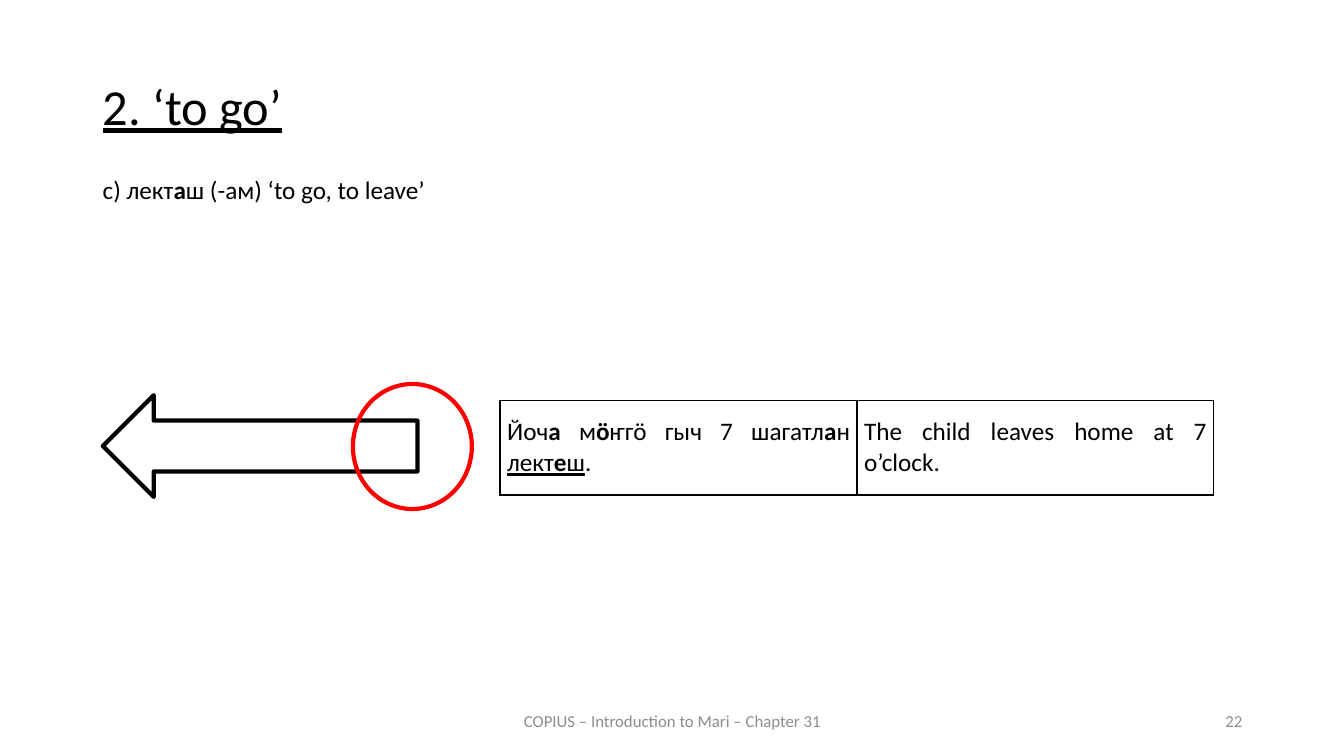
from dataclasses import dataclass

from lxml import etree
from pptx import Presentation
from pptx.dml.color import RGBColor
from pptx.enum import shapes, text
from pptx.oxml.ns import qn
from pptx.util import Pt

PX = 9144  # EMU per px, 100 px to the inch
BLACK = RGBColor(0x00, 0x00, 0x00)
GREY = RGBColor(0x8C, 0x8C, 0x8C)
RED = RGBColor(0xFF, 0x00, 0x00)
ALIGN = text.PP_ALIGN
ANCHOR = text.MSO_ANCHOR


@dataclass(frozen=True)
class Box:
    left: int
    top: int
    width: int
    height: int

    def emu(self) -> tuple[int, ...]:
        return tuple(n * PX for n in (self.left, self.top, self.width, self.height))


@dataclass(frozen=True)
class Span:
    text: str
    bold: bool = False
    underline: bool = False


@dataclass(frozen=True)
class Label:
    box: Box
    spans: list[Span]
    size: int
    color: RGBColor
    align: ALIGN
    anchor: ANCHOR


@dataclass(frozen=True)
class Outline:
    kind: shapes.MSO_SHAPE
    box: Box
    color: RGBColor


TITLE_BOX = Box(92, 76, 1150, 83)
LABELS = [
    Label(Box(442, 695, 450, 40), [Span("COPIUS – Introduction to Mari – Chapter 31")],
          12, GREY, ALIGN.CENTER, ANCHOR.MIDDLE),
    Label(Box(942, 695, 300, 40), [Span("22")], 12, GREY, ALIGN.RIGHT, ANCHOR.MIDDLE),
    Label(Box(92, 168, 517, 40),
          [Span("c) лект"), Span("а", bold=True), Span("ш (-ам) ‘to go, to leave’")],
          18, BLACK, ALIGN.LEFT, ANCHOR.TOP),
]
EXAMPLE_BOX = Box(496, 397, 708, 94)
EXAMPLE = [
    [Span("Йоч"), Span("а ", bold=True), Span("м"), Span("ӧ", bold=True),
     Span("ҥгӧ гыч 7 шагатл"), Span("а", bold=True), Span("н "),
     Span("лект", underline=True), Span("е", bold=True, underline=True),
     Span("ш", underline=True), Span(".")],
    [Span("The child leaves home at 7 o’clock.")],
]
OUTLINES = [
    Outline(shapes.MSO_SHAPE.LEFT_ARROW, Box(102, 392, 312, 101), BLACK),
    Outline(shapes.MSO_SHAPE.OVAL, Box(350, 381, 118, 124), RED),
]


def write(frame, spans: list[Span], *, size: int = 18, color: RGBColor = BLACK,
          align: ALIGN = ALIGN.LEFT, line_spacing: float = 1.0) -> None:
    paragraph = frame.paragraphs[0]
    paragraph.alignment = align
    paragraph.line_spacing = line_spacing
    paragraph.space_before = Pt(0)
    for span in spans:
        run = paragraph.add_run()
        run.text = span.text
        run.font.name = "Calibri"
        run.font.size = Pt(size)
        run.font.color.rgb = color
        run.font.bold = span.bold
        run.font.underline = span.underline


def place_title(title) -> None:
    title.left, title.top, title.width, title.height = TITLE_BOX.emu()
    frame = title.text_frame
    frame.vertical_anchor = ANCHOR.TOP
    frame.auto_size = text.MSO_AUTO_SIZE.NONE
    write(frame, [Span("2. ‘to go’", underline=True)], size=36,
          align=ALIGN.JUSTIFY, line_spacing=0.9)


def add_label(slide, label: Label) -> None:
    frame = slide.shapes.add_textbox(*label.box.emu()).text_frame
    frame.word_wrap = True
    frame.vertical_anchor = label.anchor
    write(frame, label.spans, size=label.size, color=label.color, align=label.align)


def add_borders(cell) -> None:
    properties = cell._tc.get_or_add_tcPr()
    for position, side in enumerate(("lnL", "lnR", "lnT", "lnB")):
        line = etree.Element(qn(f"a:{side}"), w=str(Pt(1)))
        fill = etree.SubElement(line, qn("a:solidFill"))
        etree.SubElement(fill, qn("a:srgbClr"), val=str(BLACK))
        properties.insert(position, line)


def add_example(slide) -> None:
    table = slide.shapes.add_table(1, len(EXAMPLE), *EXAMPLE_BOX.emu()).table
    table.first_row = False
    table.horz_banding = False
    for cell, spans in zip(table.rows[0].cells, EXAMPLE):
        cell.fill.background()
        add_borders(cell)
        cell.vertical_anchor = ANCHOR.MIDDLE
        cell.margin_left = cell.margin_right = 7 * PX
        cell.margin_top = cell.margin_bottom = 0
        write(cell.text_frame, spans, align=ALIGN.JUSTIFY)


def add_outline(slide, outline: Outline) -> None:
    shape = slide.shapes.add_shape(outline.kind, *outline.box.emu())
    shape.shadow.inherit = False
    shape.fill.background()
    shape.line.color.rgb = outline.color
    shape.line.width = Pt(3)


def main() -> None:
    deck = Presentation()
    deck.slide_width, deck.slide_height = 1333 * PX, 750 * PX
    slide = deck.slides.add_slide(deck.slide_layouts.get_by_name("Title Only"))
    place_title(slide.shapes.title)
    for label in LABELS:
        add_label(slide, label)
    add_example(slide)
    for outline in OUTLINES:
        add_outline(slide, outline)
    deck.save("out.pptx")


if __name__ == "__main__":
    main()
